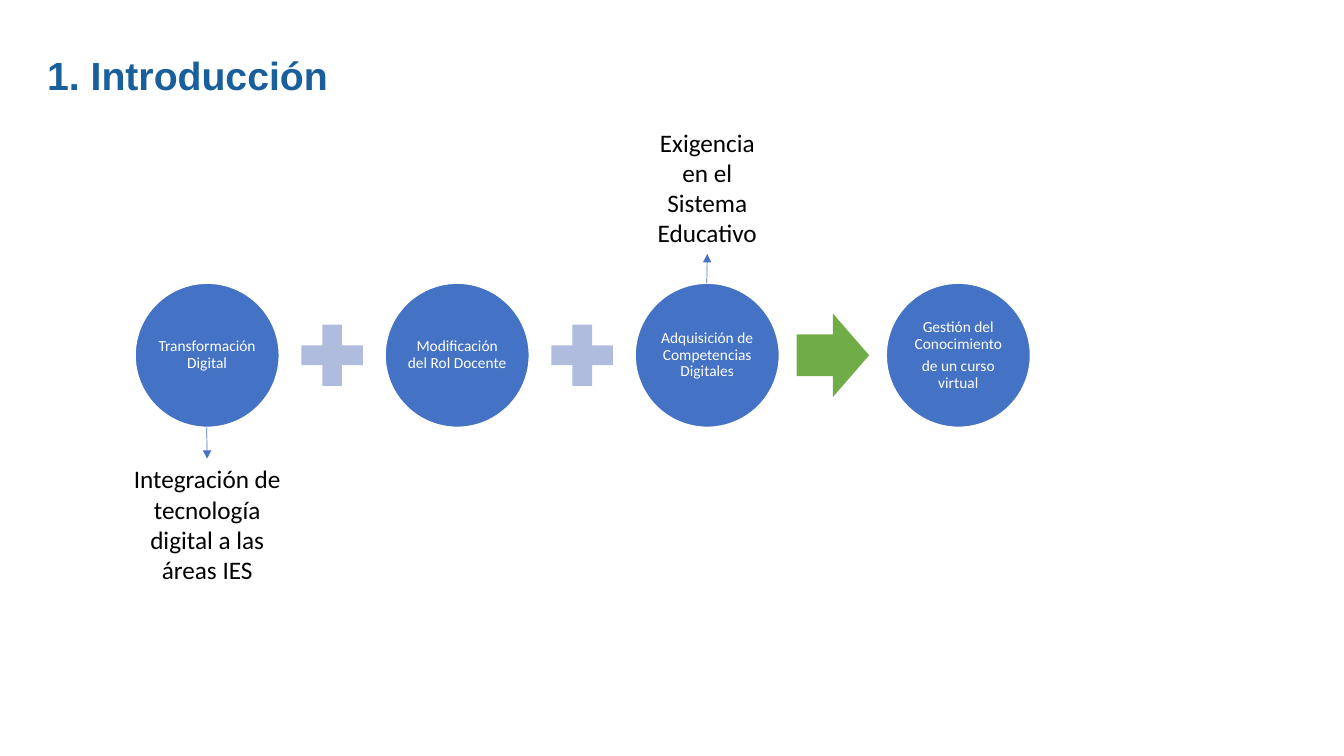
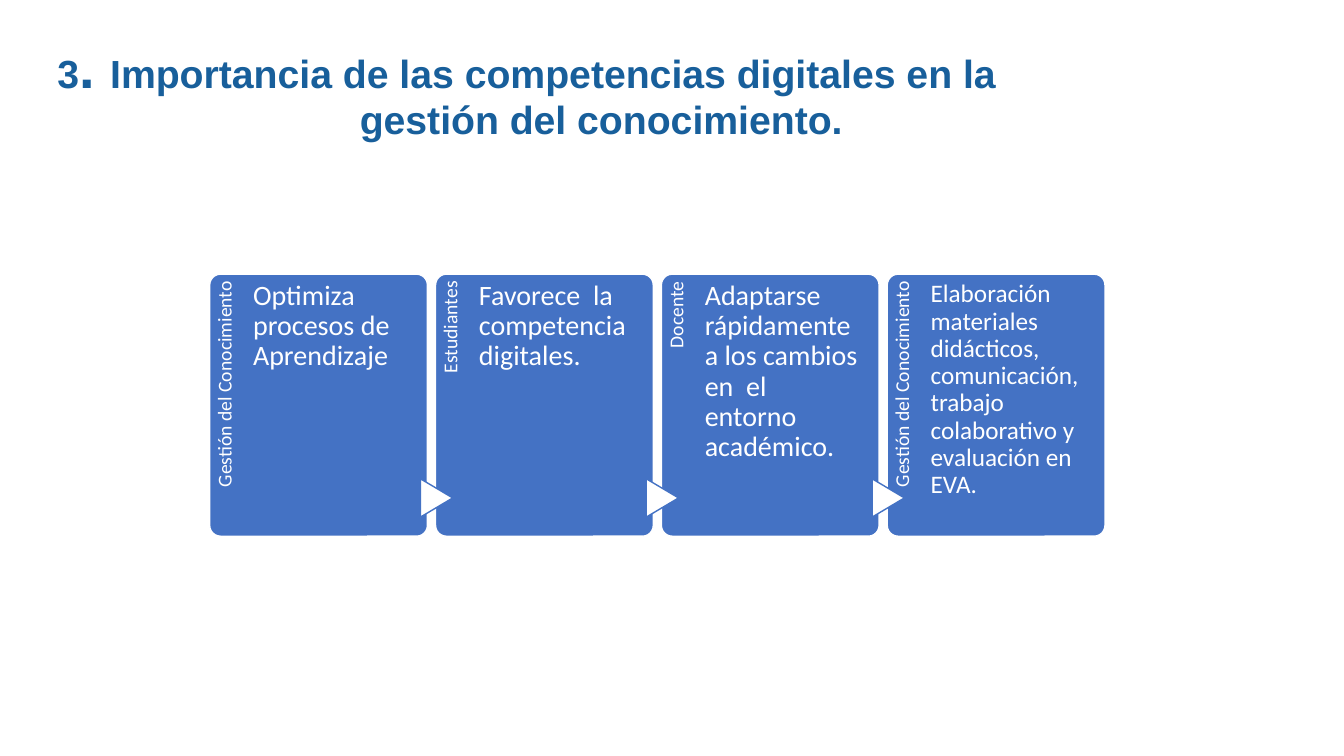
from lxml.etree import SubElement
from pptx import Presentation
from pptx.dml.color import RGBColor
from pptx.enum.shapes import MSO_CONNECTOR, MSO_SHAPE as SHAPE
from pptx.enum.text import MSO_ANCHOR as ANCHOR, PP_ALIGN as ALIGN
from pptx.oxml.ns import qn
from pptx.util import Emu, Pt

TITLE_BLUE = RGBColor(0x18, 0x5F, 0x9B)
BLUE = RGBColor(0x44, 0x72, 0xC4)
LAVENDER = RGBColor(0xB0, 0xBC, 0xDE)
GREEN = RGBColor(0x70, 0xAD, 0x47)
WHITE = RGBColor(0xFF, 0xFF, 0xFF)
BLACK = RGBColor(0x00, 0x00, 0x00)

SCALE = 9144
BLANK = 6

TITLE = dict(font="Arial", size=28, color=TITLE_BLUE, bold=True)
NOTE = dict(size=18, color=BLACK)
SMALL = dict(size=11, color=WHITE)
HEADING = dict(size=14, color=WHITE)

CIRCLE = 143
CIRCLE_TOP = 281
FIRST_CIRCLE, LAST_CIRCLE = 134, 879
STEPS = [
    ["Transformación Digital"],
    ["Modificación del Rol Docente"],
    ["Adquisición de Competencias Digitales"],
    ["Gestión del Conocimiento", "de un curso virtual"],
]
SYMBOLS = [
    (SHAPE.MATH_PLUS, 83, LAVENDER),
    (SHAPE.MATH_PLUS, 83, LAVENDER),
    (SHAPE.RIGHT_ARROW, 72, GREEN),
]
SYMBOL_HEIGHT = 83

CARD_LEFT, CARD_TOP, CARD_STEP = 208, 272, 224
CARD_WIDTH, CARD_HEIGHT = 216, 260
HEADING_LENGTH, HEADING_DEPTH = 213, 43
CARDS = [
    ("Gestión del Conocimiento", "Optimiza procesos de Aprendizaje", 20),
    ("Estudiantes", "Favorece  la competencia digitales.", 20),
    ("Docente", "Adaptarse rápidamente a los cambios en  el  entorno académico.", 20),
    ("Gestión del Conocimiento",
     "Elaboración materiales didácticos, comunicación, trabajo colaborativo "
     "y evaluación en EVA.", 18),
]


def px(n):
    return Emu(n * SCALE)


def set_all(obj, values):
    for name, value in values.items():
        setattr(obj, name, value)


def add_run(p, text, size, color, font="Calibri", bold=False):
    r = p.add_run()
    r.text = text
    set_all(r.font, dict(name=font, size=Pt(size), bold=bold))
    r.font.color.rgb = color


def write(sp, paragraphs, style, insets=(10, 5, 10, 5), anchor=ANCHOR.TOP, **layout):
    tf = sp.text_frame
    sides = ("left", "top", "right", "bottom")
    set_all(tf, {f"margin_{side}": px(n) for side, n in zip(sides, insets)})
    set_all(tf, dict(word_wrap=True, vertical_anchor=anchor))
    for i, runs in enumerate(paragraphs):
        p = tf.add_paragraph() if i else tf.paragraphs[0]
        set_all(p, layout)
        for text, extra in runs:
            add_run(p, text, **{**style, **extra})
    return sp


def plain(*texts):
    return [[(text, {})] for text in texts]


def add_box(s, x, y, w, h):
    return s.shapes.add_textbox(px(x), px(y), px(w), px(h))


def add_figure(s, kind, x, y, w, h, fill, line=None):
    sp = s.shapes.add_shape(kind, px(x), px(y), px(w), px(h))
    sp.shadow.inherit = False
    sp.fill.solid()
    sp.fill.fore_color.rgb = fill
    if line is None:
        sp.line.fill.background()
    else:
        sp.line.color.rgb = line
        sp.line.width = Pt(1)
    return sp


def add_title(s, x, y, w, paragraphs):
    sp = add_box(s, x, y, w, 83)
    return write(sp, paragraphs, TITLE, anchor=ANCHOR.BOTTOM, line_spacing=0.9)


def add_arrow(s, x, y, target, site):
    c = s.shapes.add_connector(MSO_CONNECTOR.STRAIGHT, px(x), px(y), px(x), px(y))
    c.end_connect(target, site)
    c.line.color.rgb = BLUE
    c.line.width = Pt(0.5)
    SubElement(c.line._get_or_add_ln(), qn("a:tailEnd"), type="triangle")
    SubElement(c._element.spPr, qn("a:effectLst"))


def add_note(s, circle_x, y, w, text, circle_y, site):
    center = circle_x + CIRCLE // 2
    sp = add_box(s, center - w // 2, y, w, 131)
    write(sp, plain(text), NOTE, alignment=ALIGN.CENTER)
    add_arrow(s, center, circle_y, sp, site)


def add_circle(s, x, texts):
    sp = add_figure(s, SHAPE.OVAL, x, CIRCLE_TOP, CIRCLE, CIRCLE, BLUE, WHITE)
    write(sp, plain(*texts), SMALL, (1, 1, 1, 1), ANCHOR.MIDDLE,
          alignment=ALIGN.CENTER, line_spacing=0.9, space_after=Pt(4))


def add_card(s, x, heading, body, size, pointed):
    card = add_figure(s, SHAPE.ROUNDED_RECTANGLE, x, CARD_TOP, CARD_WIDTH,
                      CARD_HEIGHT, BLUE, WHITE)
    card.adjustments[0] = 0.05
    turn = (HEADING_LENGTH - HEADING_DEPTH) // 2
    sp = add_box(s, x - turn, CARD_TOP + turn, HEADING_LENGTH, HEADING_DEPTH)
    sp.rotation = 270
    write(sp, plain(heading), HEADING, (0, 5, 7, 0),
          alignment=ALIGN.RIGHT, line_spacing=0.9)
    if pointed:
        pointer = add_figure(s, SHAPE.FLOWCHART_EXTRACT, x - 18, 478, 38, 32, WHITE, BLUE)
        pointer.rotation = 90
    sp = add_box(s, x + HEADING_DEPTH, CARD_TOP, 161, CARD_HEIGHT)
    write(sp, plain(body), dict(size=size, color=WHITE), (0, 7, 0, 0), line_spacing=0.9)


def add_introduction(prs):
    s = prs.slides.add_slide(prs.slide_layouts[BLANK])
    add_title(s, 37, 20, 594, plain("1. Introducción"))
    span = LAST_CIRCLE - FIRST_CIRCLE
    xs = [FIRST_CIRCLE + span * i // 3 for i in range(len(STEPS))]
    for x, texts in zip(xs, STEPS):
        add_circle(s, x, texts)
    for x, following, (kind, w, fill) in zip(xs, xs[1:], SYMBOLS):
        left = (x + CIRCLE + following - w) // 2
        top = CIRCLE_TOP + (CIRCLE - SYMBOL_HEIGHT) // 2
        add_figure(s, kind, left, top, w, SYMBOL_HEIGHT, fill)
    add_note(s, xs[2], 121, 121, "Exigencia en el Sistema Educativo", CIRCLE_TOP, 2)
    add_note(s, xs[0], 455, 175, "Integración de tecnología digital a las áreas IES",
             CIRCLE_TOP + CIRCLE, 0)


def add_importance(prs):
    s = prs.slides.add_slide(prs.slide_layouts[BLANK])
    title = add_title(s, 47, 64, 1246, [
        [("3", {}), (". ", dict(size=40)),
         ("Importancia de las competencias digitales en la", {})],
        [("gestión del conocimiento.", {})],
    ])
    indent = title.text_frame.paragraphs[1]._p.get_or_add_pPr()
    indent.set("marL", str(px(300)))
    for i, (heading, body, size) in enumerate(CARDS):
        add_card(s, CARD_LEFT + i * CARD_STEP, heading, body, size, i > 0)


def main():
    prs = Presentation()
    set_all(prs, dict(slide_width=px(1333), slide_height=px(750)))
    add_introduction(prs)
    add_importance(prs)
    prs.save("out.pptx")


if __name__ == "__main__":
    main()
